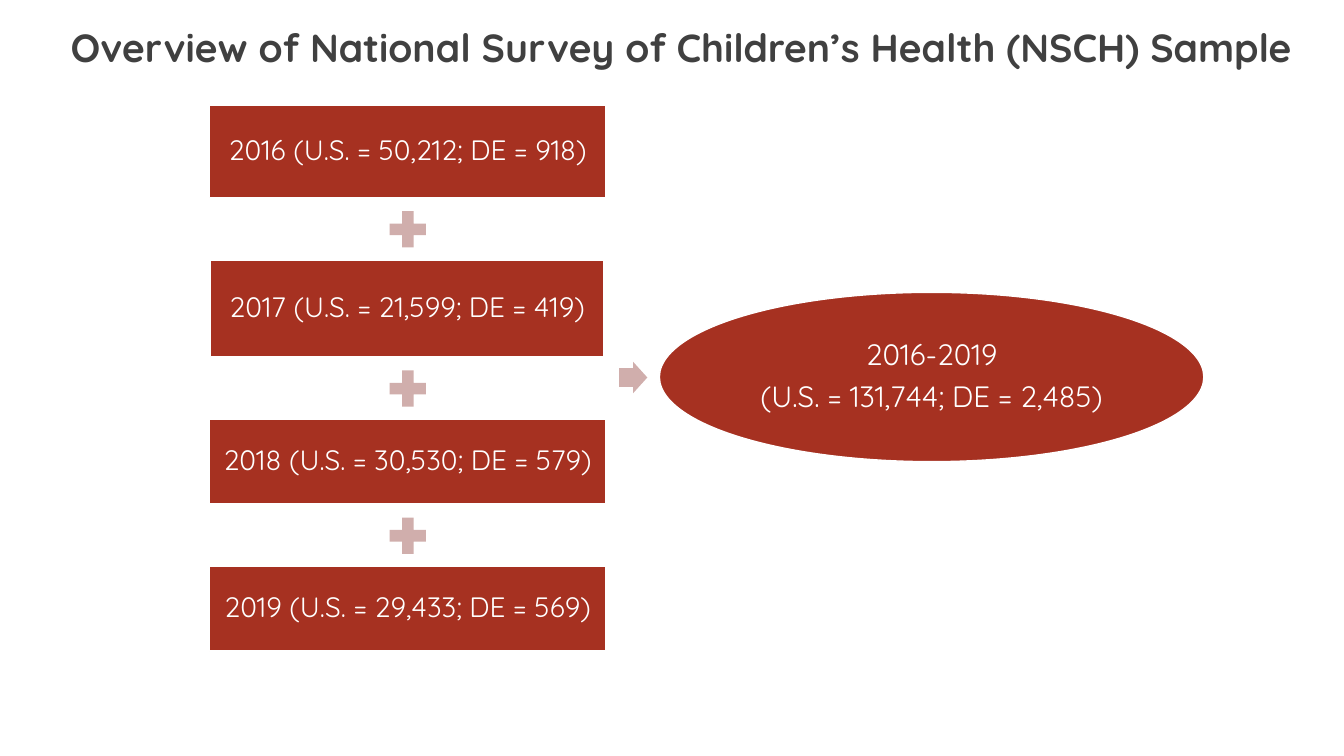
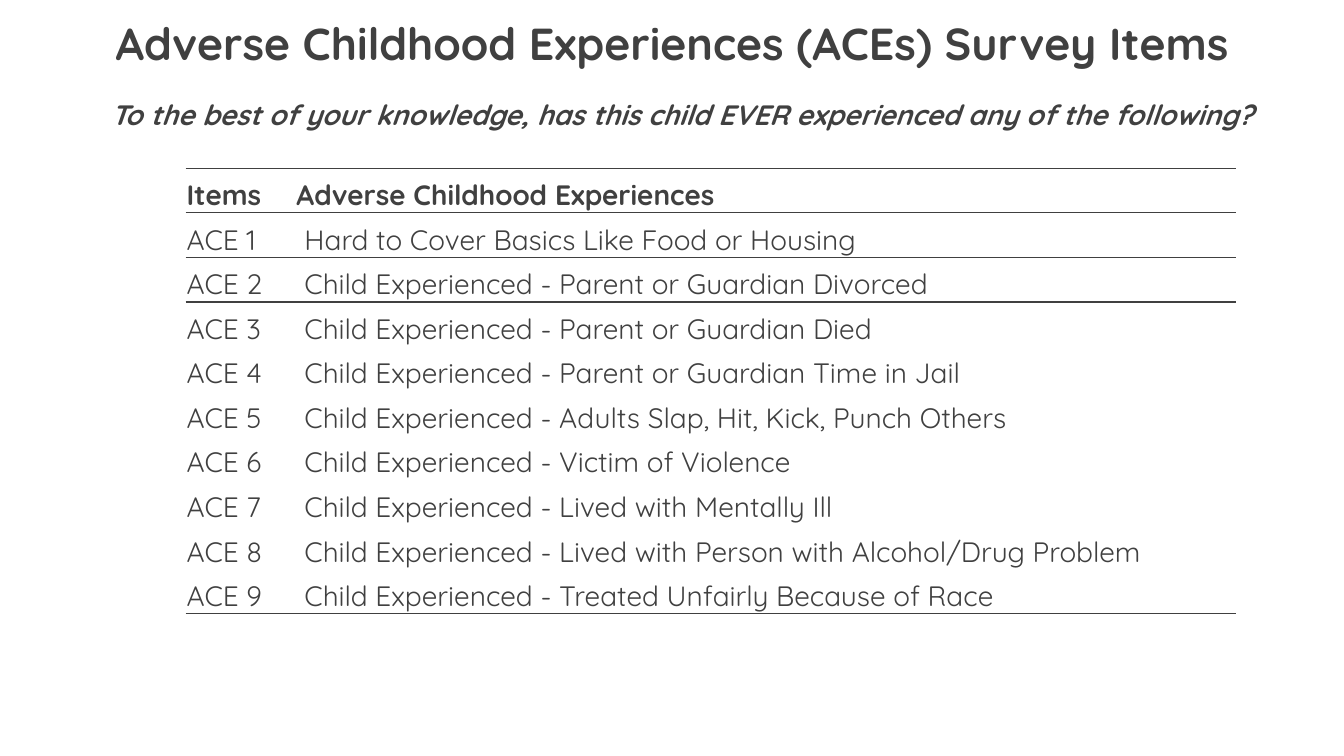
"""Build two slides on the NSCH sample and its ACE survey items."""
from lxml.etree import SubElement
from pptx import Presentation
from pptx.dml.color import RGBColor
from pptx.enum.shapes import MSO_SHAPE as SHAPE
from pptx.enum.text import MSO_ANCHOR as ANCHOR, MSO_AUTO_SIZE as AUTO, PP_ALIGN as ALIGN
from pptx.oxml.ns import qn
from pptx.util import Pt

PX = 9144
FONT = "Quicksand"
COLORS = {"text": "404040", "box": "A63121", "sign": "D0AEAC", "white": "FFFFFF"}
NO_GRID = "{2D5ABB26-0587-4C30-8999-92F81FD0307C}"


def style(p, size, color="text", bold=False, italic=False):
    p.font.name, p.font.size = FONT, Pt(size)
    p.font.bold, p.font.italic = bold, italic
    p.font.color.rgb = RGBColor.from_string(COLORS[color])


def add_shape(s, kind, box, fill, lines=(), size=20):
    sp = s.shapes.add_shape(kind, *(v * PX for v in box))
    sp.shadow.inherit = False
    sp.fill.solid()
    sp.fill.fore_color.rgb = RGBColor.from_string(COLORS[fill])
    if not lines:
        sp.line.fill.background()
        return sp
    sp.line.color.rgb = RGBColor.from_string(COLORS["white"])
    sp.line.width = Pt(1)
    tf = sp.text_frame
    tf.word_wrap, tf.vertical_anchor = True, ANCHOR.MIDDLE
    tf.margin_left = tf.margin_right = tf.margin_top = tf.margin_bottom = 3 * PX
    tf.text = "\n".join(lines)
    for p in tf.paragraphs:
        p.alignment, p.line_spacing = ALIGN.CENTER, 0.9
        style(p, size, "white")
    for p in tf.paragraphs[:-1]:
        p.space_after = Pt(7)
    return sp


prs = Presentation()
prs.slide_width, prs.slide_height = 1333 * PX, 750 * PX

titles = [
    ("Overview of National Survey of Children’s Health (NSCH) Sample", (58, 13, 1235, 62), 28),
    ("Adverse Childhood Experiences (ACEs) Survey Items", (67, 0, 1200, 75), 32),
]
for text, box, size in titles:
    s = prs.slides.add_slide(prs.slide_layouts[5])
    title = s.shapes.title
    title.left, title.top, title.width, title.height = (v * PX for v in box)
    tf = title.text_frame
    tf.text = text
    tf.auto_size, tf.word_wrap, tf.vertical_anchor = AUTO.NONE, True, ANCHOR.BOTTOM
    p = tf.paragraphs[0]
    p.alignment, p.line_spacing = ALIGN.CENTER, 0.9
    style(p, size, bold=True)
overview, items = prs.slides

years = [
    ("2016 (U.S. = 50,212; DE = 918)", 393, 92),
    ("2017 (U.S. = 21,599; DE = 419)", 390, 96),
    ("2018 (U.S. = 30,530; DE = 579)", 393, 84),
    ("2019 (U.S. = 29,433; DE = 569)", 393, 84),
]
center, top, gap, plus = 404, 104, 62, 49
for i, (text, w, h) in enumerate(years):
    if i:
        box = (center - plus // 2, top - (gap + plus) // 2, plus, plus)
        add_shape(overview, SHAPE.MATH_PLUS, box, "sign")
    add_shape(overview, SHAPE.RECTANGLE, (center - w // 2, top, w, h), "box", [text])
    top += h + gap

arrow = add_shape(overview, SHAPE.RIGHT_ARROW, (614, 359, 28, 31), "sign")
arrow.adjustments[0] = 0.6
arrow.adjustments[1] = 0.5
total = ["2016-2019", "(U.S. = 131,744; DE = 2,485)"]
add_shape(overview, SHAPE.OVAL, (654, 290, 540, 168), "box", total, 21)

tf = items.shapes.add_textbox(100 * PX, 92 * PX, 1158 * PX, 44 * PX).text_frame
tf.word_wrap = True
tf.text = "To the best of your knowledge, has this child EVER experienced any of the following?"
style(tf.paragraphs[0], 20, bold=True, italic=True)

experiences = [
    "Hard to Cover Basics Like Food or Housing",
    "Child Experienced - Parent or Guardian Divorced",
    "Child Experienced - Parent or Guardian Died",
    "Child Experienced - Parent or Guardian Time in Jail",
    "Child Experienced - Adults Slap, Hit, Kick, Punch Others",
    "Child Experienced - Victim of Violence",
    "Child Experienced - Lived with Mentally Ill",
    "Child Experienced - Lived with Person with Alcohol/Drug Problem",
    "Child Experienced - Treated Unfairly Because of Race",
]
rows = [("Items", "Adverse Childhood Experiences")]
rows += [(f"ACE {n}", text) for n, text in enumerate(experiences, 1)]
borders = {0: ("a:lnT", "a:lnB"), 1: ("a:lnT", "a:lnB"), 2: ("a:lnT",), len(rows) - 1: ("a:lnB",)}

frame = items.shapes.add_table(len(rows), 2, 184 * PX, 167 * PX, 1042 * PX, 442 * PX)
table = frame.table
table.first_row = table.horz_banding = False
frame._element.find(".//" + qn("a:tableStyleId")).text = NO_GRID
for column, w in zip(table.columns, (109, 933)):
    column.width = w * PX
for r, row in enumerate(rows):
    for c, text in enumerate(row):
        cell = table.cell(r, c)
        cell.text = text
        cell.vertical_anchor = ANCHOR.BOTTOM
        cell.margin_left = (9 if r and c else 1) * PX
        cell.margin_right = cell.margin_top = PX
        cell.margin_bottom = 0
        style(cell.text_frame.paragraphs[0], 20, bold=r == 0)
        for side in borders.get(r, ()):
            ln = SubElement(cell._tc.get_or_add_tcPr(), qn(side), w=str(Pt(1)))
            fill = SubElement(ln, qn("a:solidFill"))
            SubElement(fill, qn("a:srgbClr"), val=COLORS["text"])
        cell.fill.background()

prs.save("out.pptx")
